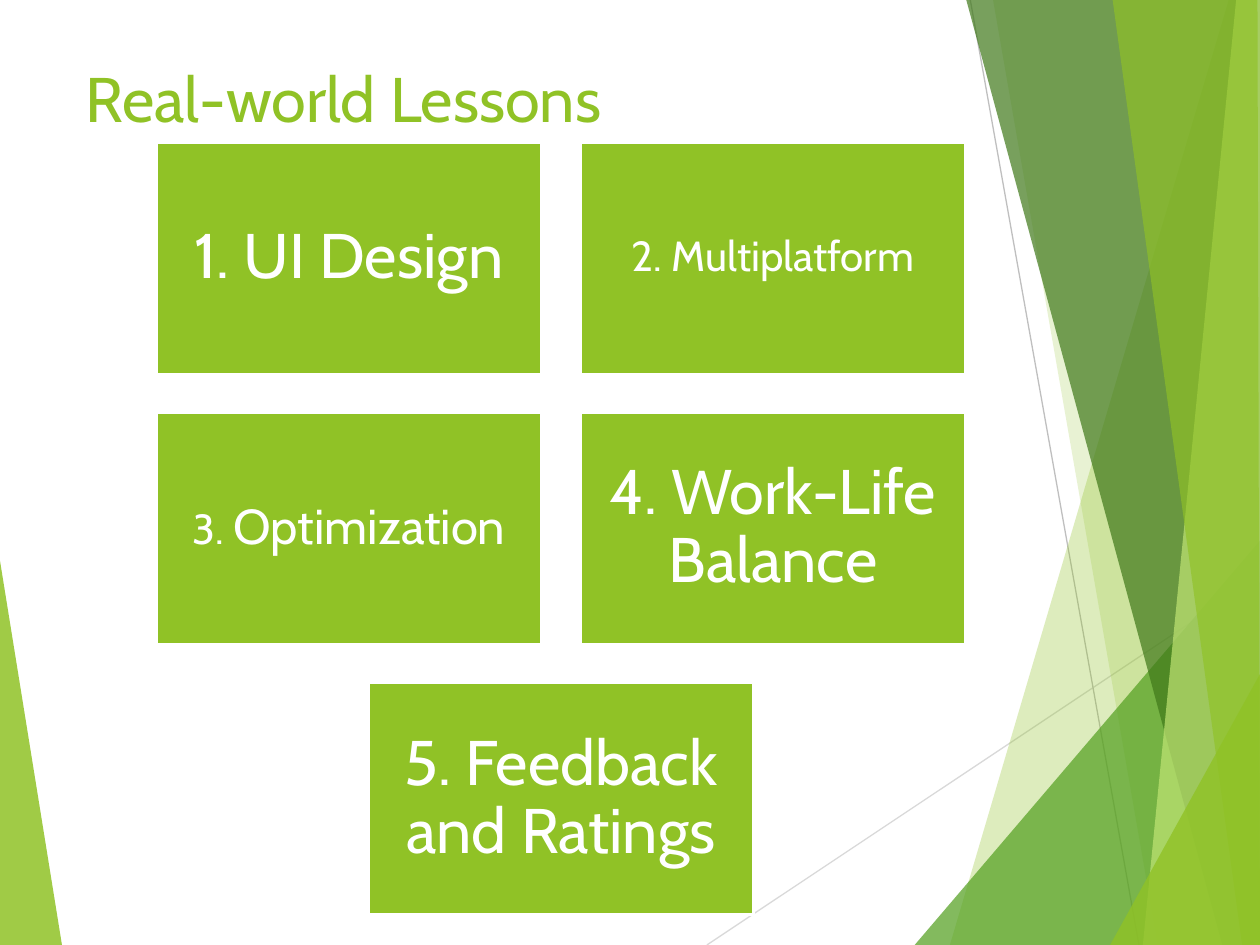
from lxml.etree import SubElement
from pptx import Presentation
from pptx.dml.color import RGBColor
from pptx.enum.shapes import MSO_CONNECTOR, MSO_SHAPE
from pptx.enum.text import MSO_ANCHOR, PP_ALIGN
from pptx.oxml.ns import qn
from pptx.util import Cm, Pt

COLORS = {
    "lime": "90C226", "green": "54A021", "forest": "3F7819", "pale": "C0E474",
    "white": "FFFFFF", "light gray": "D9D9D9", "gray": "BFBFBF",
}
FONT = "Cabin"
WIDTH, HEIGHT = 25.4, 19.05

TITLE = "Real-world Lessons"

# Each card: text runs with their sizes, inner margin
CARDS = [
    ([("1. UI Design", 36)], 0.38),
    ([("2. Multiplatform", 24)], 0.25),
    ([("3. ", 24), ("Optimization", 28)], 0.25),
    ([("4. Work-Life Balance", 36)], 0.38),
    ([("5. Feedback and Ratings", 36)], 0.38),
]
COLUMNS = 2
CARD_WIDTH, CARD_HEIGHT, GAP = 7.77, 4.67, 0.78
GRID_LEFT, GRID_TOP = 3.15, 2.87

# Background decoration: lines (start, end, colour), facets (points, colour, opacity %)
RAYS = [
    ((14.25, HEIGHT), (WIDTH, 11.62), "light gray"),
    ((19.56, 0), (22.96, HEIGHT), "gray"),
]
CORNER_TOP, CORNER_BOTTOM = (WIDTH, 0), (WIDTH, HEIGHT)
FACETS = [
    ([(0, 11.3), (1.25, HEIGHT), (0, HEIGHT)], "lime", 85),
    ([(24.77, 0), (19.15, HEIGHT), CORNER_BOTTOM, CORNER_TOP], "lime", 30),
    ([(20.02, 0), (23.34, HEIGHT), CORNER_BOTTOM, CORNER_TOP], "lime", 20),
    ([(18.44, HEIGHT), (WIDTH, 10.9), CORNER_BOTTOM], "green", 72),
    ([(19.48, 0), (24.64, HEIGHT), CORNER_BOTTOM, CORNER_TOP], "forest", 70),
    ([(24.92, 0), (23.04, HEIGHT), CORNER_BOTTOM, CORNER_TOP], "pale", 70),
    ([(22.43, 0), (25.04, HEIGHT), CORNER_BOTTOM, (25.35, 0)], "lime", 65),
    ([(22.38, HEIGHT), (WIDTH, 13.59), CORNER_BOTTOM], "lime", 80),
]


def color(name):
    return RGBColor.from_string(COLORS[name])


def fill_shape(shape, name):
    shape.shadow.inherit = False
    shape.fill.solid()
    shape.fill.fore_color.rgb = color(name)


def add_ray(slide, start, end, name):
    points = [Cm(value) for value in start + end]
    connector = slide.shapes.add_connector(MSO_CONNECTOR.STRAIGHT, *points)
    connector.line.color.rgb = color(name)
    connector.line.width = Pt(0.75)
    SubElement(connector.element.spPr, qn("a:effectLst"))


def add_facet(slide, points, name, opacity):
    corners = [(Cm(x), Cm(y)) for x, y in points]
    builder = slide.shapes.build_freeform(*corners[0])
    builder.add_line_segments(corners[1:], close=True)
    shape = builder.convert_to_shape()
    fill_shape(shape, name)
    shape.line.fill.background()
    rgb = shape.element.spPr.find(qn("a:solidFill")).find(qn("a:srgbClr"))
    SubElement(rgb, qn("a:alpha"), val=str(opacity * 1000))


def add_title(slide):
    box = slide.shapes.add_textbox(Cm(1.47), Cm(1.07), Cm(11.35), Cm(1.8))
    box.text_frame.word_wrap = True
    paragraph = box.text_frame.paragraphs[0]
    paragraph.text = TITLE
    paragraph.font.name = FONT
    paragraph.font.size = Pt(36)
    paragraph.font.color.rgb = color("lime")


def add_card(slide, left, top, runs, margin):
    card = slide.shapes.add_shape(
        MSO_SHAPE.RECTANGLE, Cm(left), Cm(top), Cm(CARD_WIDTH), Cm(CARD_HEIGHT))
    fill_shape(card, "lime")
    card.line.color.rgb = color("white")
    card.line.width = Pt(1.5)
    frame = card.text_frame
    frame.word_wrap = True
    frame.vertical_anchor = MSO_ANCHOR.MIDDLE
    frame.margin_left = frame.margin_right = Cm(margin)
    frame.margin_top = frame.margin_bottom = Cm(margin)
    paragraph = frame.paragraphs[0]
    paragraph.alignment = PP_ALIGN.CENTER
    paragraph.line_spacing = 0.9
    paragraph.font.name = FONT
    paragraph.font.color.rgb = color("white")
    paragraph.font.size = Pt(runs[0][1])
    for text, size in runs:
        run = paragraph.add_run()
        run.text = text
        if len(runs) > 1:
            run.font.size = Pt(size)


def add_cards(slide):
    for index, (runs, margin) in enumerate(CARDS):
        row, column = divmod(index, COLUMNS)
        in_row = min(COLUMNS, len(CARDS) - row * COLUMNS)
        # A short last row is centred under the full ones
        column += (COLUMNS - in_row) / 2
        left = GRID_LEFT + column * (CARD_WIDTH + GAP)
        top = GRID_TOP + row * (CARD_HEIGHT + GAP)
        add_card(slide, left, top, runs, margin)


def main():
    presentation = Presentation()
    presentation.slide_width, presentation.slide_height = Cm(WIDTH), Cm(HEIGHT)
    slide = presentation.slides.add_slide(presentation.slide_layouts[6])
    for ray in RAYS:
        add_ray(slide, *ray)
    for facet in FACETS:
        add_facet(slide, *facet)
    add_title(slide)
    add_cards(slide)
    presentation.save("out.pptx")


if __name__ == "__main__":
    main()
